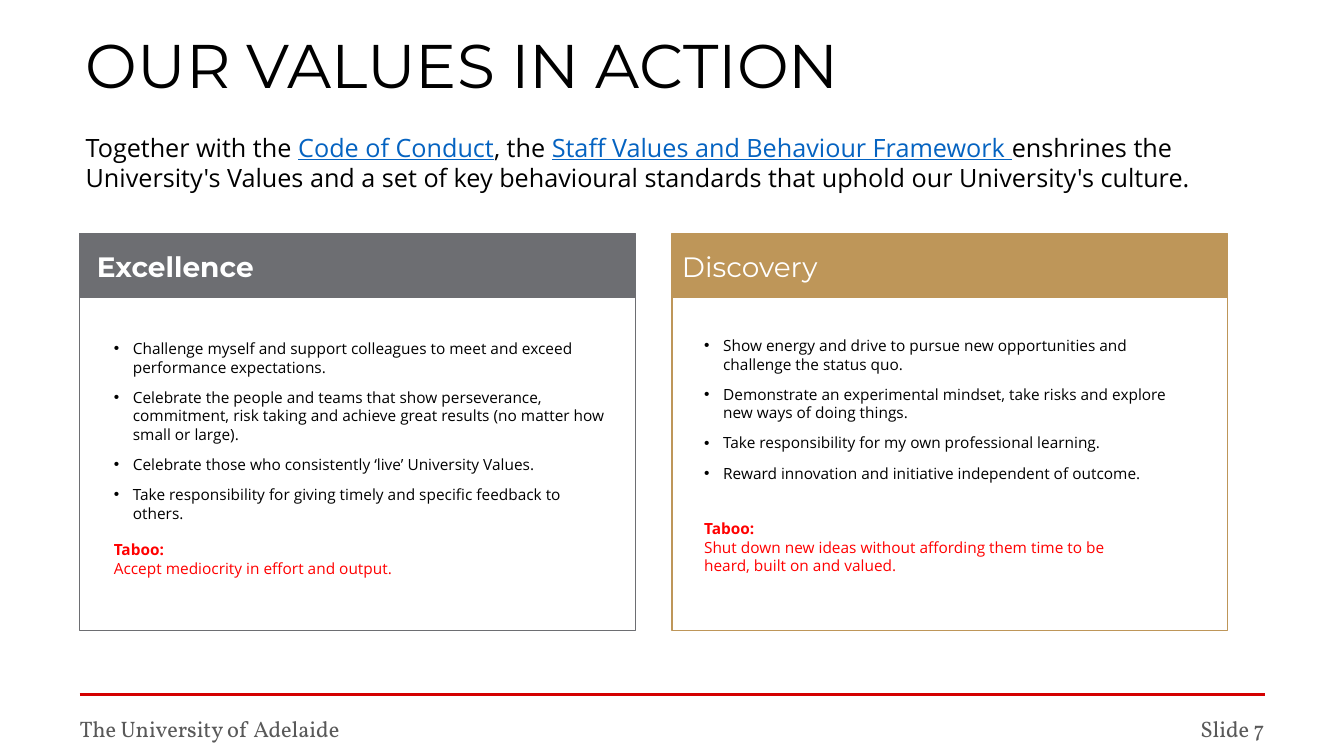
from pptx import Presentation
from pptx.dml.color import RGBColor as RGB
from pptx.enum.shapes import MSO_CONNECTOR as CONN, MSO_SHAPE as SHAPE
from pptx.enum.text import MSO_ANCHOR as ANCHOR, PP_ALIGN as ALIGN
from pptx.oxml.ns import qn
from pptx.util import Cm, Pt
from lxml.etree import SubElement

TITLE = "OUR VALUES IN ACTION"
INTRO = [
    ("Together with the ", "plain"),
    ("Code of Conduct", "link"),
    (", the ", "plain"),
    ("Staff Values and Behaviour Framework ", "link"),
    ("enshrines the University's Values and a set of key behavioural standards "
     "that uphold our University's culture.", "plain"),
]
VALUES = [
    {
        "name": "Excellence", "color": "6D6E72", "bold": True,
        "left": 2.01, "indent": 0.43, "body": (0.61, 2.54), "taboo_gap": 13,
        "actions": [
            "Challenge myself and support colleagues to meet and exceed performance expectations.",
            "Celebrate the people and teams that show perseverance, commitment, risk taking "
            "and achieve great results (no matter how small or large).",
            "Celebrate those who consistently ‘live’ University Values.",
            "Take responsibility for giving timely and specific feedback to others.",
        ],
        "taboo": "Accept mediocrity in effort and output.",
    },
    {
        "name": "Discovery", "color": "BE9659", "bold": False,
        "left": 16.94, "indent": 0.25, "body": (0.56, 2.46), "taboo_gap": 26.5,
        "actions": [
            "Show energy and drive to pursue new opportunities and challenge the status quo.",
            "Demonstrate an experimental mindset, take risks and explore new ways of doing things.",
            "Take responsibility for my own professional learning.",
            "Reward innovation and initiative independent of outcome.",
        ],
        "taboo": "Shut down new ideas without affording them time to be\vheard, built on and valued.",
    },
]
FOOTER = [
    ("The University of Adelaide", 2.01, 13.33, ALIGN.LEFT),
    ("Slide 7", 25.2, 6.68, ALIGN.RIGHT),
]

THEME = {
    "title": {"name": "Montserrat", "size": 44, "color": "000000"},
    "plain": {"name": "Open Sans", "size": 18, "color": "000000"},
    "link": {"name": "Open Sans", "size": 18, "color": "0563C1", "underline": True},
    "header": {"name": "Montserrat", "size": 20, "color": "FFFFFF"},
    "action": {"name": "Open Sans", "size": 11, "color": "000000"},
    "taboo": {"name": "Open Sans", "size": 11, "color": "FF0000"},
    "taboo_label": {"name": "Open Sans", "size": 11, "color": "FF0000", "bold": True},
    "footer": {"name": "Vollkorn", "size": 16, "color": "595959"},
    "rule": "D40000",
}

CARD_TOP, CARD_W, CARD_H, HEADER_H = 5.89, 14.01, 10, 1.62
BODY_W, BODY_H, HANG = 12.98, 6.1, 0.48
ACTION_GAP = 8.3


def set_font(font, style, **extra):
    for key, value in {**THEME[style], **extra}.items():
        if key == "color":
            font.color.rgb = RGB.from_string(value)
        else:
            setattr(font, key, Pt(value) if key == "size" else value)


def add_runs(p, runs):
    for text, style in runs:
        for i, line in enumerate(text.split("\v")):
            if i:
                p.add_line_break()
            r = p.add_run()
            r.text = line
            set_font(r.font, style)


def add_box(slide, left, top, width, height, wrap=True, inset=True):
    tf = slide.shapes.add_textbox(Cm(left), Cm(top), Cm(width), Cm(height)).text_frame
    tf.word_wrap = wrap
    if not inset:
        for side in ("left", "top", "right", "bottom"):
            setattr(tf, f"margin_{side}", 0)
    return tf


def add_rect(slide, left, height, color, filled):
    sp = slide.shapes.add_shape(SHAPE.RECTANGLE, Cm(left), Cm(CARD_TOP), Cm(CARD_W), Cm(height))
    sp.shadow.inherit = False
    rgb = RGB.from_string(color)
    if filled:
        sp.fill.solid()
        sp.fill.fore_color.rgb = rgb
        sp.line.fill.background()
    else:
        sp.fill.background()
        sp.line.color.rgb = rgb
        sp.line.width = Pt(1)
    return sp


def add_bullet(p):
    pPr = p._p.get_or_add_pPr()
    pPr.set("marL", str(Cm(HANG)))
    pPr.set("indent", str(-Cm(HANG)))
    SubElement(pPr, qn("a:buFont")).set("typeface", "Arial")
    SubElement(pPr, qn("a:buChar")).set("char", "•")


def add_card(slide, value):
    left = value["left"]
    add_rect(slide, left, CARD_H, value["color"], False)
    tf = add_rect(slide, left, HEADER_H, value["color"], True).text_frame
    tf.margin_left = Cm(value["indent"])
    tf.vertical_anchor = ANCHOR.MIDDLE
    p = tf.paragraphs[0]
    p.alignment = ALIGN.LEFT
    r = p.add_run()
    r.text = value["name"]
    set_font(r.font, "header", bold=value["bold"])

    dx, dy = value["body"]
    tf = add_box(slide, left + dx, CARD_TOP + dy, BODY_W, BODY_H)
    for i, action in enumerate(value["actions"]):
        p = tf.add_paragraph() if i else tf.paragraphs[0]
        if i:
            p.space_before = Pt(ACTION_GAP)
        add_bullet(p)
        add_runs(p, [(action, "action")])
    p = tf.add_paragraph()
    p.space_before = Pt(value["taboo_gap"])
    add_runs(p, [("Taboo:\v", "taboo_label"), (value["taboo"], "taboo")])


def main():
    prs = Presentation()
    prs.slide_width, prs.slide_height = Cm(33.88), Cm(19.05)
    slide = prs.slides.add_slide(prs.slide_layouts[6])

    rule = slide.shapes.add_connector(CONN.STRAIGHT, Cm(2.01), Cm(17.5), Cm(31.88), Cm(17.5))
    rule.line.color.rgb = RGB.from_string(THEME["rule"])
    rule.line.width = Pt(2.5)
    SubElement(rule._element.spPr, qn("a:effectLst"))

    for text, left, width, align in FOOTER:
        p = add_box(slide, left, 18.01, width, 0.51, inset=False).paragraphs[0]
        p.alignment = align
        add_runs(p, [(text, "footer")])

    for value in VALUES:
        add_card(slide, value)

    add_runs(add_box(slide, 1.91, 3.2, 28.58, 1.8).paragraphs[0], INTRO)
    add_runs(add_box(slide, 1.91, 0.56, 21.67, 2.13, wrap=False).paragraphs[0], [(TITLE, "title")])
    prs.save("out.pptx")


if __name__ == "__main__":
    main()
